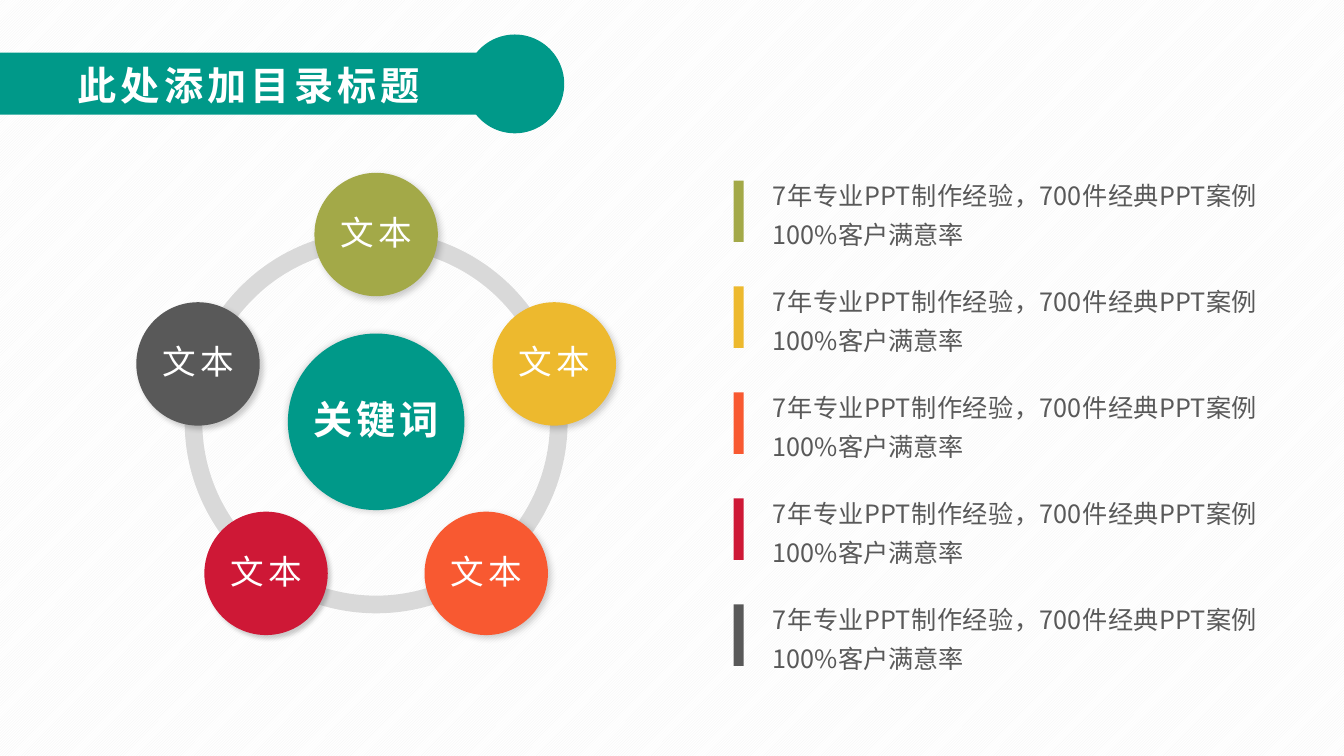
from math import cos, radians, sin

from lxml import etree
from pptx import Presentation
from pptx.dml.color import RGBColor
from pptx.enum.dml import MSO_PATTERN
from pptx.enum.shapes import MSO_SHAPE
from pptx.enum.text import MSO_ANCHOR, MSO_AUTO_SIZE, PP_ALIGN
from pptx.oxml import parse_xml
from pptx.oxml.ns import nsdecls, qn
from pptx.util import Cm, Pt

OVAL, RECTANGLE, DONUT = MSO_SHAPE.OVAL, MSO_SHAPE.RECTANGLE, MSO_SHAPE.DONUT
LEFT, CENTER, JUSTIFY = PP_ALIGN.LEFT, PP_ALIGN.CENTER, PP_ALIGN.JUSTIFY
MIDDLE = MSO_ANCHOR.MIDDLE
FONT = "Noto Sans CJK SC"
TEAL, RING_GRAY, TEXT_GRAY, WHITE = "009989", "D9D9D9", "595959", "FFFFFF"
DESCRIPTION = "7年专业PPT制作经验，700件经典PPT案例100%客户满意率"

# Colour and shadow blur (pt) of each item, clockwise from the top
ITEMS = [("A3A948", 5), ("EDB92E", 5), ("F85931", 5), ("CE1836", 3), ("595959", 4)]


def add_filled_shape(kind, left, top, width, height, color):
    shape = slide.shapes.add_shape(kind, Cm(left), Cm(top), Cm(width), Cm(height))
    shape.shadow.inherit = False
    shape.fill.solid()
    shape.fill.fore_color.rgb = RGBColor.from_string(color)
    shape.line.fill.background()
    return shape


def write_text(shape, text, size, color, alignment, line_spacing=1.0, bold=False, spacing=0):
    shape.text_frame.text = text
    paragraph = shape.text_frame.paragraphs[0]
    paragraph.alignment = alignment
    paragraph.line_spacing = line_spacing
    font = paragraph.runs[0].font
    font.size, font.bold, font.name = Pt(size), bold, FONT
    font.color.rgb = RGBColor.from_string(color)
    properties = paragraph.runs[0].font._element
    properties.set("spc", str(spacing * 100))
    etree.SubElement(properties, qn("a:ea")).set("typeface", FONT)


presentation = Presentation()
presentation.slide_width, presentation.slide_height = Cm(33.87), Cm(19.05)
slide = presentation.slides.add_slide(presentation.slide_layouts[5])

# Striped background
background = slide.background.fill
background.patterned()
background.pattern = MSO_PATTERN.LIGHT_UPWARD_DIAGONAL
background.fore_color.rgb = RGBColor.from_string("F2F2F2")
background.back_color.rgb = RGBColor.from_string(WHITE)

# Title banner with a round end
add_filled_shape(RECTANGLE, 0, 1.33, 12.97, 1.56, TEAL)
banner_end = add_filled_shape(OVAL, 11.73, 0.87, 2.49, 2.49, TEAL)
title = slide.shapes.title
banner_end.element.addnext(title.element)
title.left, title.top, title.width, title.height = Cm(1.7), Cm(1.4), Cm(9.98), Cm(1.45)
write_text(title, "此处添加目录标题", 28, WHITE, LEFT, bold=True, spacing=3)
title.text_frame.auto_size = MSO_AUTO_SIZE.NONE
title.text_frame.vertical_anchor = MIDDLE

# Ring
center_x, center_y = 9.48, 10.63
ring_size, orbit = 9.65, 4.72
ring = add_filled_shape(DONUT, center_x - ring_size / 2, center_y - ring_size / 2,
                        ring_size, ring_size, RING_GRAY)
ring.adjustments[0] = 0.046

# Hub and the five circles spaced evenly around it:
# x, y, diameter, colour, label, size, bold, shadow blur, shadow distance
circles = [(center_x, center_y, 4.45, TEAL, "关键词", 28, True, 5, 0)]
for index, (color, blur) in enumerate(ITEMS):
    angle = radians(-90 + index * 360 / len(ITEMS))
    circles.append((center_x + orbit * cos(angle), center_y + orbit * sin(angle),
                    3.11, color, "文本", 24, False, blur, 3))

for x, y, diameter, color, label, size, bold, blur, distance in circles:
    circle = add_filled_shape(OVAL, x - diameter / 2, y - diameter / 2, diameter, diameter, color)
    write_text(circle, label, size, WHITE, CENTER, 0.9, bold, 3)
    circle.text_frame.word_wrap = False
    circle.text_frame.vertical_anchor = MIDDLE
    effects = circle.element.spPr.find(qn("a:effectLst"))
    effects.append(parse_xml(
        f'<a:outerShdw {nsdecls("a")} blurRad="{Pt(blur)}" dist="{Pt(distance)}" dir="2700000" '
        'algn="ctr" rotWithShape="0"><a:srgbClr val="000000"><a:alpha val="20000"/>'
        '</a:srgbClr></a:outerShdw>'))

# Descriptions with colour bars
row_pitch = 2.67
for index, (color, blur) in enumerate(ITEMS):
    offset = index * row_pitch
    add_filled_shape(RECTANGLE, 18.49, 4.55 + offset, 0.25, 1.55, color)
    description = slide.shapes.add_textbox(Cm(19.23), Cm(4.19 + offset), Cm(12.7), Cm(2.24))
    description.text_frame.word_wrap = True
    description.text_frame.auto_size = MSO_AUTO_SIZE.SHAPE_TO_FIT_TEXT
    write_text(description, DESCRIPTION, 18, TEXT_GRAY, JUSTIFY, 1.3)

presentation.save("out.pptx")
